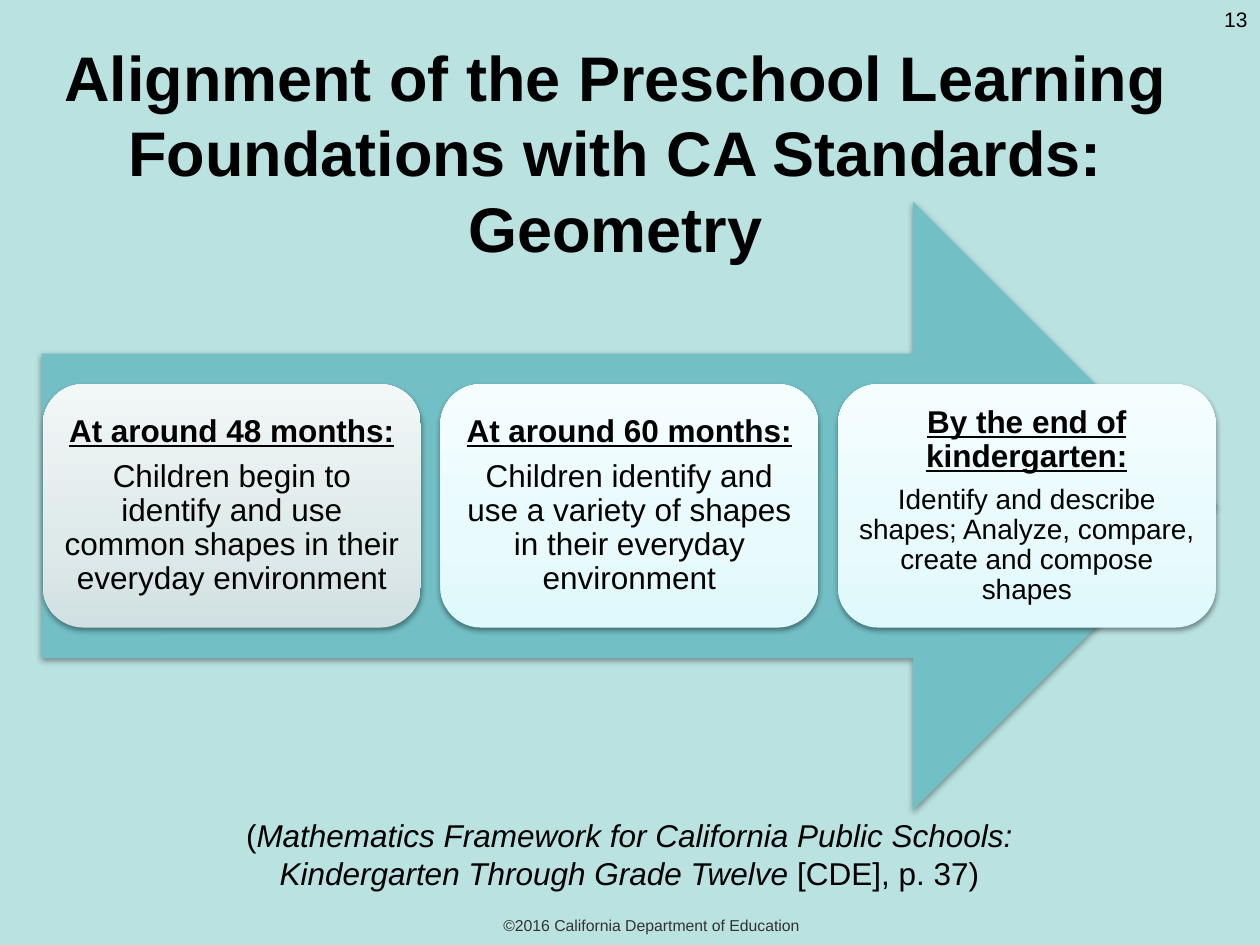
from pptx import Presentation
from pptx.dml.color import RGBColor
from pptx.enum.shapes import MSO_SHAPE
from pptx.enum.text import MSO_ANCHOR, MSO_AUTO_SIZE, PP_ALIGN
from pptx.oxml import parse_xml
from pptx.oxml.ns import nsdecls
from pptx.util import Inches, Pt

THEME = {
    "font": "Arial",
    "text": "000000", "footer": "333333", "background": "BAE2E1", "arrow": "72BFC5",
    "gray": ("D1E0E2", "DEE9EA", "F2F7F7"),
    "aqua": ("DFF9FC", "E8FAFC", "F5FEFF"),
    "stops": (0, 35, 100),
    "title_size": 36, "body_size": 18, "detail_size": 16, "number_size": 12, "footer_size": 9,
}


def write(shape, paragraphs, align=PP_ALIGN.CENTER, anchor=MSO_ANCHOR.TOP, inset=None, **spacing):
    """Fill a shape with paragraphs, each a list of (text, font values) runs."""
    frame = shape.text_frame
    frame.word_wrap = True
    frame.auto_size = MSO_AUTO_SIZE.NONE
    frame.vertical_anchor = anchor
    if inset is not None:
        for side in ("left", "top", "right", "bottom"):
            setattr(frame, f"margin_{side}", inset)
    for index, runs in enumerate(paragraphs):
        paragraph = frame.paragraphs[0] if index == 0 else frame.add_paragraph()
        for name, value in {"alignment": align, **spacing}.items():
            setattr(paragraph, name, value)
        for text, values in runs:
            run = paragraph.add_run()
            run.text = text
            values = {"name": THEME["font"], "color": THEME["text"], **values}
            run.font.color.rgb = RGBColor.from_string(values.pop("color"))
            for name, value in values.items():
                setattr(run.font, name, value)


def add_raised(kind, left, top, width, height, colors):
    """Add a borderless shape with a soft shadow; several colours make a gradient."""
    shape = slide.shapes.add_shape(kind, *map(Inches, (left, top, width, height)))
    if len(colors) == 1:
        shape.fill.solid()
        shape.fill.fore_color.rgb = RGBColor.from_string(colors[0])
    else:
        stops = "".join(f'<a:gs pos="{stop * 1000}"><a:srgbClr val="{color}"/></a:gs>'
                        for stop, color in zip(THEME["stops"], colors))
        shape.element.spPr.append(parse_xml(
            f'<a:gradFill {nsdecls("a")} rotWithShape="1"><a:gsLst>{stops}</a:gsLst>'
            '<a:lin ang="16200000" scaled="0"/></a:gradFill>'))
    shape.line.fill.background()
    shape.shadow.inherit = False
    shape.element.spPr.find(".//{*}effectLst").append(parse_xml(
        f'<a:outerShdw {nsdecls("a")} blurRad="{Pt(3.1)}" dist="{Pt(1.6)}" dir="5400000" '
        'rotWithShape="0"><a:srgbClr val="000000"><a:alpha val="38000"/></a:srgbClr></a:outerShdw>'))
    return shape


presentation = Presentation()
presentation.slide_width, presentation.slide_height = Inches(10), Inches(7.5)
slide = presentation.slides.add_slide(presentation.slide_layouts[5])
slide.background.fill.solid()
slide.background.fill.fore_color.rgb = RGBColor.from_string(THEME["background"])

# Title
title = slide.shapes.title
title.left, title.top, title.width, title.height = map(Inches, (0.3, 0.58, 9.17, 1.25))
write(title, [[("Alignment of the Preschool Learning Foundations with CA Standards: Geometry",
                {"size": Pt(THEME["title_size"]), "bold": True})]], anchor=MSO_ANCHOR.MIDDLE)

# Arrow behind the stages
arrow_left, arrow_top, arrow_width, arrow_height = 0.33, 1.6, 9.33, 4.83
add_raised(MSO_SHAPE.RIGHT_ARROW, arrow_left, arrow_top, arrow_width, arrow_height,
           (THEME["arrow"],))

# Stage cards, evenly spaced and centred on the arrow
stages = [
    ("At around 48 months:",
     "Children begin to identify and use common shapes in their everyday environment",
     "gray", "body_size"),
    ("At around 60 months:",
     "Children identify and use a variety of shapes in their everyday environment",
     "aqua", "body_size"),
    ("By the end of kindergarten:",
     "Identify and describe shapes; Analyze, compare, create and compose shapes",
     "aqua", "detail_size"),
]
card_left, card_width, card_gap = 0.34, 3, 0.155
card_height = arrow_height * 0.4
card_top = arrow_top + (arrow_height - card_height) / 2
for column, (heading, detail, colors, detail_size) in enumerate(stages):
    card = add_raised(MSO_SHAPE.ROUNDED_RECTANGLE, card_left + column * (card_width + card_gap),
                      card_top, card_width, card_height, THEME[colors])
    write(card, [
        [(heading, {"size": Pt(THEME["body_size"]), "bold": True, "underline": True})],
        [(detail, {"size": Pt(THEME[detail_size])})],
    ], anchor=MSO_ANCHOR.MIDDLE, inset=Inches(0.07), line_spacing=0.9, space_after=Pt(6.3))

# Source, page number and copyright line
body = {"size": Pt(THEME["body_size"])}
notes = [
    ((1.12, 6.43, 7.75, 0.67), PP_ALIGN.CENTER, MSO_ANCHOR.TOP, [
        ("(", body),
        ("Mathematics Framework for California Public Schools: "
         "Kindergarten Through Grade Twelve ", {**body, "italic": True}),
        ("[CDE], p. 37)", body)]),
    ((9.25, 0, 0.75, 0.3), PP_ALIGN.RIGHT, MSO_ANCHOR.TOP,
     [("13", {"size": Pt(THEME["number_size"])})]),
    ((0.58, 7.22, 9.18, 0.25), PP_ALIGN.CENTER, MSO_ANCHOR.MIDDLE,
     [("©2016 California Department of Education",
       {"size": Pt(THEME["footer_size"]), "color": THEME["footer"]})]),
]
for box, align, anchor, runs in notes:
    write(slide.shapes.add_textbox(*map(Inches, box)), [runs], align, anchor)

presentation.save("out.pptx")
